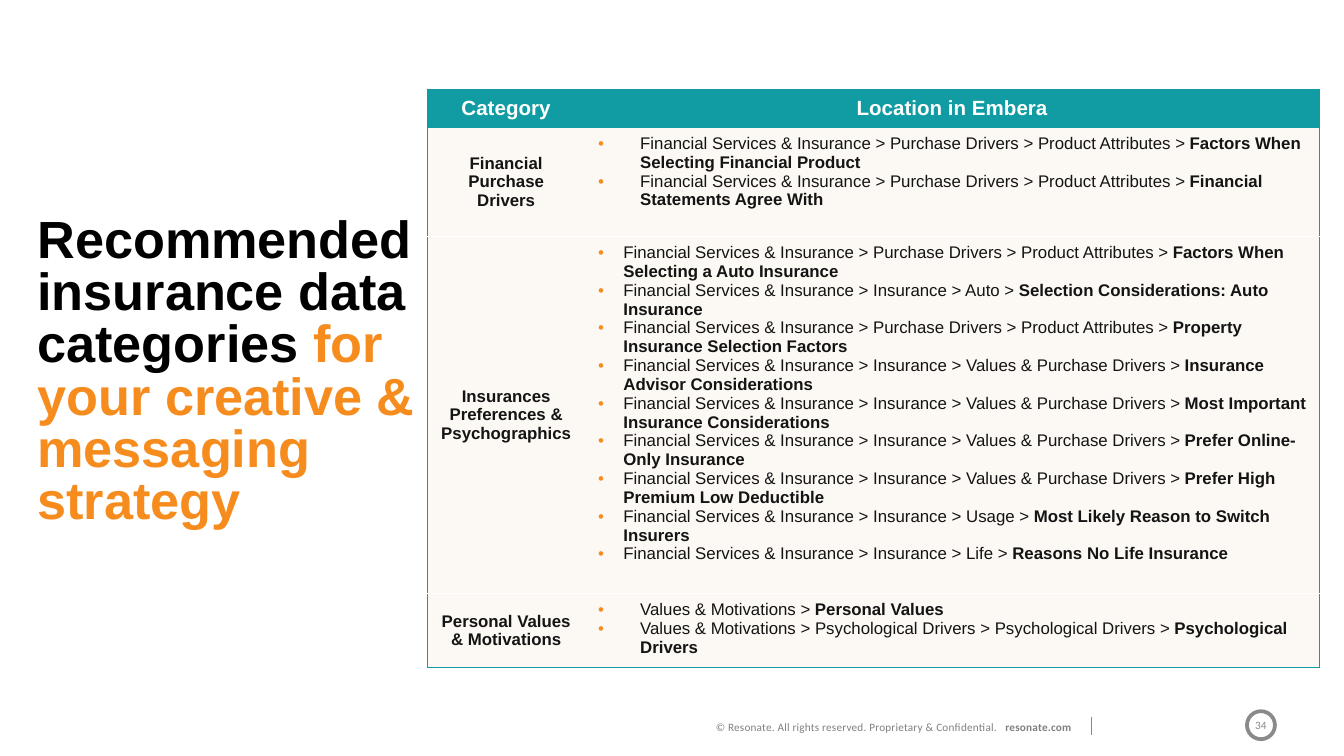
from pptx import Presentation
from pptx.dml.color import RGBColor
from pptx.enum import shapes, text
from pptx.oxml import parse_xml
from pptx.oxml.ns import nsdecls
from pptx.util import Pt

TEAL = RGBColor(0x11, 0x9C, 0xA3)
CREAM = RGBColor(0xFC, 0xF8, 0xF3)
ORANGE = RGBColor(0xF6, 0x8C, 0x1E)
INK = RGBColor(0x14, 0x14, 0x14)
GRAY = RGBColor(0x80, 0x80, 0x80)
RING_GRAY = RGBColor(0x8A, 0x8A, 0x8A)
BLACK = RGBColor(0, 0, 0)
WHITE = RGBColor(0xFF, 0xFF, 0xFF)

CENTER = text.PP_ALIGN.CENTER
MIDDLE = text.MSO_ANCHOR.MIDDLE

FACTORS = "Financial Services & Insurance > Purchase Drivers > Product Attributes > "
INSURANCE = "Financial Services & Insurance > Insurance > "
VALUES = INSURANCE + "Values & Purchase Drivers > "
MOTIVATIONS = "Values & Motivations > "

# category, row height, bullet indent, [(path, bold ending)]
CATEGORIES = [
    ("Financial Purchase Drivers", 58.5, 22.5, [
        (FACTORS, "Factors When Selecting Financial Product"),
        (FACTORS, "Financial Statements Agree With"),
    ]),
    ("Insurances Preferences & Psychographics", 191, 13.5, [
        (FACTORS, "Factors When Selecting a Auto Insurance"),
        (INSURANCE + "Auto > ", "Selection Considerations: Auto Insurance"),
        (FACTORS, "Property Insurance Selection Factors"),
        (VALUES, "Insurance Advisor Considerations"),
        (VALUES, "Most Important Insurance Considerations"),
        (VALUES, "Prefer Online-Only Insurance"),
        (VALUES, "Prefer High Premium Low Deductible"),
        (INSURANCE + "Usage > ", "Most Likely Reason to Switch Insurers"),
        (INSURANCE + "Life > ", "Reasons No Life Insurance"),
    ]),
    ("Personal Values & Motivations", 39.5, 22.5, [
        (MOTIVATIONS, "Personal Values"),
        (MOTIVATIONS + "Psychological Drivers > Psychological Drivers > ",
         "Psychological Drivers"),
    ]),
]


def add_span(para, words, size, color, bold=False, font="Arial"):
    span = para.add_run()
    span.text = words
    span.font.name = font
    span.font.size = Pt(size)
    span.font.bold = bold
    span.font.color.rgb = color
    return span


def add_text_box(page, left, top, width, height):
    box = page.shapes.add_textbox(Pt(left), Pt(top), Pt(width), Pt(height))
    box.text_frame.word_wrap = True
    return box.text_frame


def add_bullet(para, indent):
    """Hang the paragraph behind an orange dot."""
    props = para._p.get_or_add_pPr()
    props.set("marL", str(Pt(indent)))
    props.set("indent", str(-Pt(indent)))
    props.append(parse_xml(
        f'<a:buClr {nsdecls("a")}><a:srgbClr val="{ORANGE}"/></a:buClr>'))
    props.append(parse_xml(f'<a:buFont {nsdecls("a")} typeface="Arial"/>'))
    props.append(parse_xml(f'<a:buChar {nsdecls("a")} char="•"/>'))


def set_borders(cell, **sides):
    """Draw the sides given as (color, width) and clear the others."""
    props = cell._tc.get_or_add_tcPr()
    for side in "LRTB":
        color, width = sides.get(side, (None, 0))
        fill = (f'<a:solidFill><a:srgbClr val="{color}"/></a:solidFill>'
                if color else "<a:noFill/>")
        props.append(parse_xml(
            f'<a:ln{side} {nsdecls("a")} w="{Pt(width)}">{fill}</a:ln{side}>'))


def style_cell(cell, fill, **borders):
    set_borders(cell, **borders)
    cell.fill.solid()
    cell.fill.fore_color.rgb = fill


def fill_centered(cell, words, size, color):
    cell.vertical_anchor = MIDDLE
    para = cell.text_frame.paragraphs[0]
    para.alignment = CENTER
    add_span(para, words, size, color, bold=True)


def fill_locations(cell, locations, indent):
    frame = cell.text_frame
    for number, (path_words, ending) in enumerate(locations):
        para = frame.add_paragraph() if number else frame.paragraphs[0]
        add_bullet(para, indent)
        add_span(para, path_words, 9, INK)
        add_span(para, ending, 9, INK, bold=True)


def add_category_table(page):
    frame = page.shapes.add_table(len(CATEGORIES) + 1, 2,
                                  Pt(229), Pt(47.75), Pt(478), Pt(309.5))
    table = frame.table
    table.columns[0].width = Pt(84.25)
    table.columns[1].width = Pt(393.75)
    edge, divider = (TEAL, 0.75), (WHITE, 1)

    table.rows[0].height = Pt(20.5)
    for column, (words, side) in enumerate([("Category", "L"),
                                            ("Location in Embera", "R")]):
        cell = table.cell(0, column)
        style_cell(cell, TEAL, T=edge, B=edge, **{side: edge})
        fill_centered(cell, words, 11, WHITE)

    for row, (category, height, indent, locations) in enumerate(CATEGORIES, 1):
        table.rows[row].height = Pt(height)
        above = edge if row == 1 else divider
        below = edge if row == len(CATEGORIES) else divider
        name, location = table.cell(row, 0), table.cell(row, 1)
        style_cell(name, CREAM, L=edge, T=above, B=below)
        style_cell(location, CREAM, R=edge, T=above, B=below)
        fill_centered(name, category, 9, INK)
        fill_locations(location, locations, indent)


def add_title(page):
    para = add_text_box(page, 13, 112.5, 260.5, 161).paragraphs[0]
    para.line_spacing = Pt(28)
    add_span(para, "Recommended insurance data categories ", 28, BLACK, True)
    add_span(para, "for your creative & messaging strategy", 28, ORANGE, True)


def add_footer(page):
    para = add_text_box(page, -10, 382.5, 592.5, 14.5).paragraphs[0]
    para.alignment = text.PP_ALIGN.RIGHT
    for words, bold in [
            ("© Resonate. All rights reserved. Proprietary & Confidential.   ", False),
            ("resonate.com ", True)]:
        span = add_span(para, words, 6, GRAY, bold, "Calibri")
        span.font._element.set("spc", "10")

    divider = page.shapes.add_connector(shapes.MSO_CONNECTOR.STRAIGHT,
                                        Pt(584.75), Pt(384), Pt(584.75), Pt(394))
    divider.line.color.rgb = RING_GRAY
    divider.line.width = Pt(0.75)
    divider._element.spPr.append(parse_xml(f'<a:effectLst {nsdecls("a")}/>'))


def add_page_number(page):
    ring = page.shapes.add_shape(shapes.MSO_SHAPE.OVAL,
                                 Pt(668), Pt(381), Pt(15), Pt(15))
    ring.shadow.inherit = False
    ring.fill.background()
    ring.line.color.rgb = RING_GRAY
    ring.line.width = Pt(2)
    frame = ring.text_frame
    frame.word_wrap = False
    frame.vertical_anchor = MIDDLE
    frame.paragraphs[0].alignment = CENTER
    add_span(frame.paragraphs[0], "34", 6, RING_GRAY, font="Calibri")


def main():
    deck = Presentation()
    deck.slide_width, deck.slide_height = Pt(720), Pt(405)
    page = deck.slides.add_slide(deck.slide_layouts[6])
    add_footer(page)
    add_page_number(page)
    add_title(page)
    add_category_table(page)
    deck.save("out.pptx")


if __name__ == "__main__":
    main()
